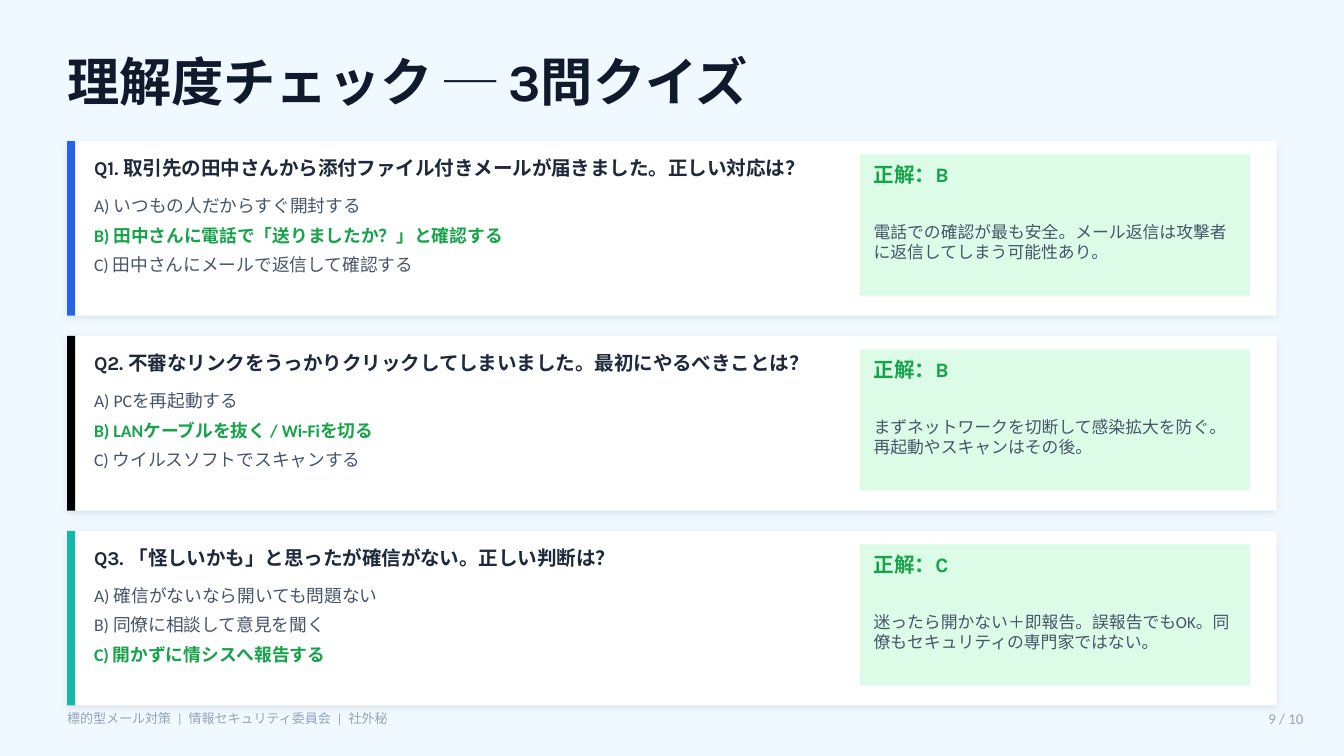
"""Build the three-question quiz slide of a mail security course."""
from dataclasses import dataclass

from lxml.etree import SubElement
from pptx import Presentation
from pptx.dml.color import RGBColor
from pptx.enum.shapes import MSO_SHAPE
from pptx.enum.text import MSO_ANCHOR, PP_ALIGN
from pptx.oxml.ns import qn
from pptx.util import Pt


@dataclass(frozen=True)
class Theme:
    background: str = "F0F9FF"
    card: str = "FFFFFF"
    panel: str = "DCFCE7"
    title: str = "0F1B2D"
    question: str = "1E293B"
    body: str = "475569"
    correct: str = "16A34A"
    footer: str = "94A3B8"
    shadow: str = "000000"
    heading_font: str = "Karla"
    body_font: str = "Calibri"
    title_size: float = 28
    question_size: float = 10.5
    option_size: float = 9.5
    answer_size: float = 11
    reason_size: float = 9
    page_size: float = 8
    footer_size: float = 7


THEME = Theme()
LEFT = 36
CARD_TOP, CARD_HEIGHT, CARD_PITCH = 75.6, 93.6, 104.4
OPTION_PITCH = 15.84

QUIZ = [
    ("2563EB", "取引先の田中さんから添付ファイル付きメールが届きました。正しい対応は？",
     ["いつもの人だからすぐ開封する",
      "田中さんに電話で「送りましたか？」と確認する",
      "田中さんにメールで返信して確認する"],
     "B", "電話での確認が最も安全。メール返信は攻撃者に返信してしまう可能性あり。"),
    ("000000", "不審なリンクをうっかりクリックしてしまいました。最初にやるべきことは？",
     ["PCを再起動する",
      "LANケーブルを抜く / Wi-Fiを切る",
      "ウイルスソフトでスキャンする"],
     "B", "まずネットワークを切断して感染拡大を防ぐ。再起動やスキャンはその後。"),
    ("14B8A6", "「怪しいかも」と思ったが確信がない。正しい判断は？",
     ["確信がないなら開いても問題ない",
      "同僚に相談して意見を聞く",
      "開かずに情シスへ報告する"],
     "C", "迷ったら開かない＋即報告。誤報告でもOK。同僚もセキュリティの専門家ではない。"),
]


def add_text(s, text, x, y, w, h, size, color, font=THEME.body_font,
             bold=False, align=PP_ALIGN.LEFT):
    tf = s.shapes.add_textbox(Pt(x), Pt(y), Pt(w), Pt(h)).text_frame
    tf.word_wrap = True
    tf.vertical_anchor = MSO_ANCHOR.MIDDLE
    tf.margin_left = tf.margin_right = tf.margin_top = tf.margin_bottom = 0
    p = tf.paragraphs[0]
    p.text = text
    p.alignment = align
    p.font.size = Pt(size)
    p.font.name = font
    p.font.bold = bold
    p.font.color.rgb = RGBColor.from_string(color)


def add_rect(s, x, y, w, h, color):
    sp = s.shapes.add_shape(MSO_SHAPE.RECTANGLE, Pt(x), Pt(y), Pt(w), Pt(h))
    sp.shadow.inherit = False
    sp.fill.solid()
    sp.fill.fore_color.rgb = RGBColor.from_string(color)
    sp.line.fill.background()
    return sp


def add_soft_shadow(sp):
    effects = sp.element.spPr.find(qn("a:effectLst"))
    shadow = SubElement(effects, qn("a:outerShdw"), blurRad=str(Pt(4)),
                        dist=str(Pt(1)), dir=str(135 * 60000),
                        algn="bl", rotWithShape="0")
    color = SubElement(shadow, qn("a:srgbClr"), val=THEME.shadow)
    SubElement(color, qn("a:alpha"), val="8000")


def add_options(s, options, answer, y):
    for i, (letter, option) in enumerate(zip("ABC", options)):
        correct = letter == answer
        add_text(s, f"{letter}) {option}", 50.4, y + i * OPTION_PITCH, 381.6, 14.4,
                 THEME.option_size, THEME.correct if correct else THEME.body,
                 bold=correct)


def add_answer(s, answer, reason, y):
    add_rect(s, 460.8, y, 208.8, 75.6, THEME.panel)
    add_text(s, f"正解：{answer}", 468, y + 1.44, 194.4, 18, THEME.answer_size,
             THEME.correct, THEME.heading_font, bold=True)
    add_text(s, reason, 468, y + 21.6, 194.4, 50.4, THEME.reason_size, THEME.body)


def add_card(s, number, y, accent, question, options, answer, reason):
    add_soft_shadow(add_rect(s, LEFT, y, 648, CARD_HEIGHT, THEME.card))
    add_rect(s, LEFT, y, 4.32, CARD_HEIGHT, accent)
    add_text(s, f"Q{number}. {question}", 50.4, y + 3.6, 396, 21.6,
             THEME.question_size, THEME.question, THEME.heading_font, bold=True)
    add_options(s, options, answer, y + 27.36)
    add_answer(s, answer, reason, y + 7.2)


def add_footer(s):
    add_text(s, "9 / 10", 655.2, 375.84, 43.2, 18, THEME.page_size, THEME.footer,
             align=PP_ALIGN.RIGHT)
    add_text(s, "標的型メール対策  |  情報セキュリティ委員会  |  社外秘",
             LEFT, 375.84, 381.6, 18, THEME.footer_size, THEME.footer)


def main():
    prs = Presentation()
    prs.slide_width, prs.slide_height = Pt(720), Pt(405)
    s = prs.slides.add_slide(prs.slide_layouts[6])
    s.background.fill.solid()
    s.background.fill.fore_color.rgb = RGBColor.from_string(THEME.background)
    add_text(s, "理解度チェック ─ 3問クイズ", LEFT, 21.6, 648, 43.2,
             THEME.title_size, THEME.title, THEME.heading_font, bold=True)
    for i, item in enumerate(QUIZ):
        add_card(s, i + 1, CARD_TOP + i * CARD_PITCH, *item)
    add_footer(s)
    prs.save("out.pptx")


if __name__ == "__main__":
    main()
